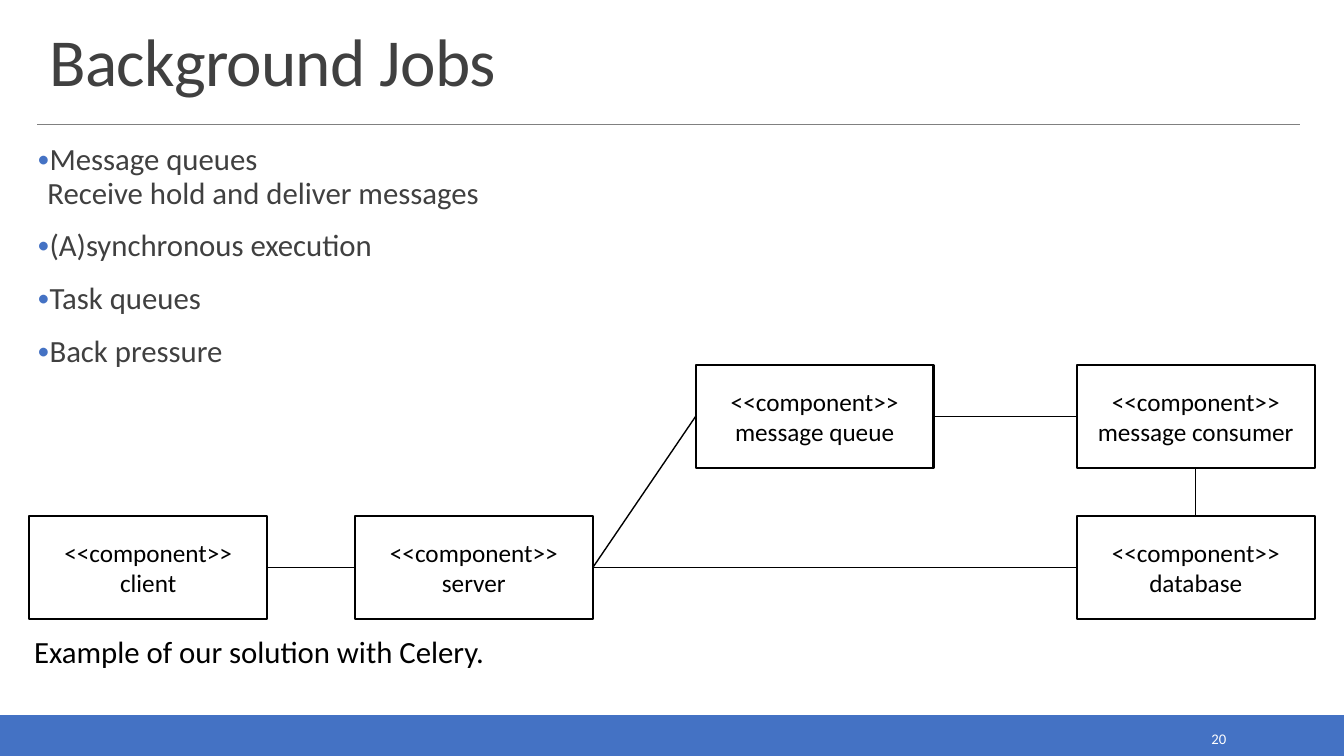
from lxml.etree import SubElement
from pptx import Presentation
from pptx.dml.color import RGBColor
from pptx.enum.shapes import MSO_CONNECTOR as Connector, MSO_SHAPE as Preset
from pptx.enum.text import MSO_ANCHOR as Anchor, PP_ALIGN as Align
from pptx.oxml.ns import qn
from pptx.util import Inches, Pt

BLUE = RGBColor(0x44, 0x72, 0xC4)
WHITE = RGBColor(0xFF, 0xFF, 0xFF)
BLACK = RGBColor(0x00, 0x00, 0x00)
CHARCOAL = RGBColor(0x40, 0x40, 0x40)
GREY = RGBColor(0x80, 0x80, 0x80)

FONT = "Calibri"
WIDTH, HEIGHT = 13.33, 7.5
COLUMNS = [0.29, 3.52, 6.9, 10.68]
ROWS = [3.62, 5.12]
BOX_WIDTH, BOX_HEIGHT = 2.36, 1.02
TOP, LEFT, BOTTOM, RIGHT = range(4)

COMPONENTS = {
    "client": (0, 1),
    "server": (1, 1),
    "database": (3, 1),
    "message queue": (2, 0),
    "message consumer": (3, 0),
}
LINKS = [
    ("client", RIGHT, "server", LEFT),
    ("server", RIGHT, "database", LEFT),
    ("server", RIGHT, "message queue", LEFT),
    ("message queue", RIGHT, "message consumer", LEFT),
    ("message consumer", BOTTOM, "database", TOP),
]
TOPICS = [
    ["Message queues", "Receive hold and deliver messages"],
    ["(A)synchronous execution"],
    ["Task queues"],
    ["Back pressure"],
]


def add_run(paragraph, text, size, color):
    run = paragraph.add_run()
    run.text = text
    run.font.name = FONT
    run.font.size = Pt(size)
    run.font.color.rgb = color
    return run


def add_text_frame(slide, left, top, width, height, anchor=Anchor.TOP):
    box = slide.shapes.add_textbox(*map(Inches, (left, top, width, height)))
    frame = box.text_frame
    frame.word_wrap = True
    frame.vertical_anchor = anchor
    return frame


def add_rectangle(slide, left, top, width, height, border, weight):
    rectangle = slide.shapes.add_shape(
        Preset.RECTANGLE, *map(Inches, (left, top, width, height)))
    rectangle.shadow.inherit = False
    rectangle.line.color.rgb = border
    rectangle.line.width = Pt(weight)
    return rectangle


def add_line(slide, color, weight, ends=(0, 0, 0, 0)):
    line = slide.shapes.add_connector(Connector.STRAIGHT, *map(Inches, ends))
    line.line.color.rgb = color
    line.line.width = Pt(weight)
    SubElement(line._element.spPr, qn("a:effectLst"))
    return line


def add_footer(slide, number):
    band_top = HEIGHT - 0.4
    band = add_rectangle(slide, 0, band_top, WIDTH, 0.4, BLUE, 1.25)
    band.fill.solid()
    band.fill.fore_color.rgb = BLUE
    frame = add_text_frame(slide, 10.83, band_top + 0.09, 1.43, 0.28, Anchor.MIDDLE)
    paragraph = frame.paragraphs[0]
    paragraph.alignment = Align.RIGHT
    add_run(paragraph, number, 10.5, WHITE)


def add_title(slide, text):
    add_line(slide, GREY, 0.5, (0.37, 1.23, 12.89, 1.23))
    frame = add_text_frame(slide, 0.39, 0.2, 12.52, 0.84, Anchor.BOTTOM)
    paragraph = frame.paragraphs[0]
    paragraph.line_spacing = 0.85
    title = add_run(paragraph, text, 48, CHARCOAL)
    title._r.get_or_add_rPr().set("spc", "-50")


def add_bullet(paragraph):
    properties = paragraph._p.get_or_add_pPr()
    properties.set("marL", str(Inches(0.1)))
    properties.set("indent", str(Inches(-0.1)))
    color = SubElement(properties, qn("a:buClr"))
    SubElement(color, qn("a:srgbClr"), val=str(BLUE))
    SubElement(properties, qn("a:buSzPct"), val="80000")
    SubElement(properties, qn("a:buFont"), typeface=FONT)
    SubElement(properties, qn("a:buChar"), char="•")


def add_topics(slide, topics):
    frame = add_text_frame(slide, 0.37, 1.39, 12.52, 2.52)
    frame.margin_left = frame.margin_right = 0
    frame.margin_top = frame.margin_bottom = Inches(0.04)
    for index, lines in enumerate(topics):
        paragraph = frame.add_paragraph() if index else frame.paragraphs[0]
        add_bullet(paragraph)
        paragraph.line_spacing = 0.9
        paragraph.space_before = Pt(12 if index else 0)
        paragraph.space_after = Pt(2)
        for line_index, line in enumerate(lines):
            if line_index:
                paragraph.add_line_break()
            add_run(paragraph, line, 22, CHARCOAL)


def add_component(slide, name, column, row):
    component = add_rectangle(
        slide, COLUMNS[column], ROWS[row], BOX_WIDTH, BOX_HEIGHT, BLACK, 1.5)
    component.fill.background()
    frame = component.text_frame
    frame.word_wrap = True
    frame.vertical_anchor = Anchor.MIDDLE
    for paragraph, text in (
        (frame.paragraphs[0], "<<component>>"),
        (frame.add_paragraph(), name),
    ):
        paragraph.alignment = Align.CENTER
        add_run(paragraph, text, 18, BLACK)
    return component


def add_diagram(slide):
    components = {
        name: add_component(slide, name, *cell) for name, cell in COMPONENTS.items()
    }
    for source, source_side, target, target_side in LINKS:
        link = add_line(slide, BLACK, 1)
        link.begin_connect(components[source], source_side)
        link.end_connect(components[target], target_side)


def add_caption(slide, text):
    paragraph = add_text_frame(slide, 0.24, 6.27, 12.81, 0.5).paragraphs[0]
    paragraph.line_spacing = 0.9
    add_run(paragraph, text, 22, BLACK)


def main():
    deck = Presentation()
    deck.slide_width = Inches(WIDTH)
    deck.slide_height = Inches(HEIGHT)
    slide = deck.slides.add_slide(deck.slide_layouts[6])
    add_footer(slide, "20")
    add_title(slide, "Background Jobs")
    add_topics(slide, TOPICS)
    add_diagram(slide)
    add_caption(slide, "Example of our solution with Celery.")
    deck.save("out.pptx")


if __name__ == "__main__":
    main()
